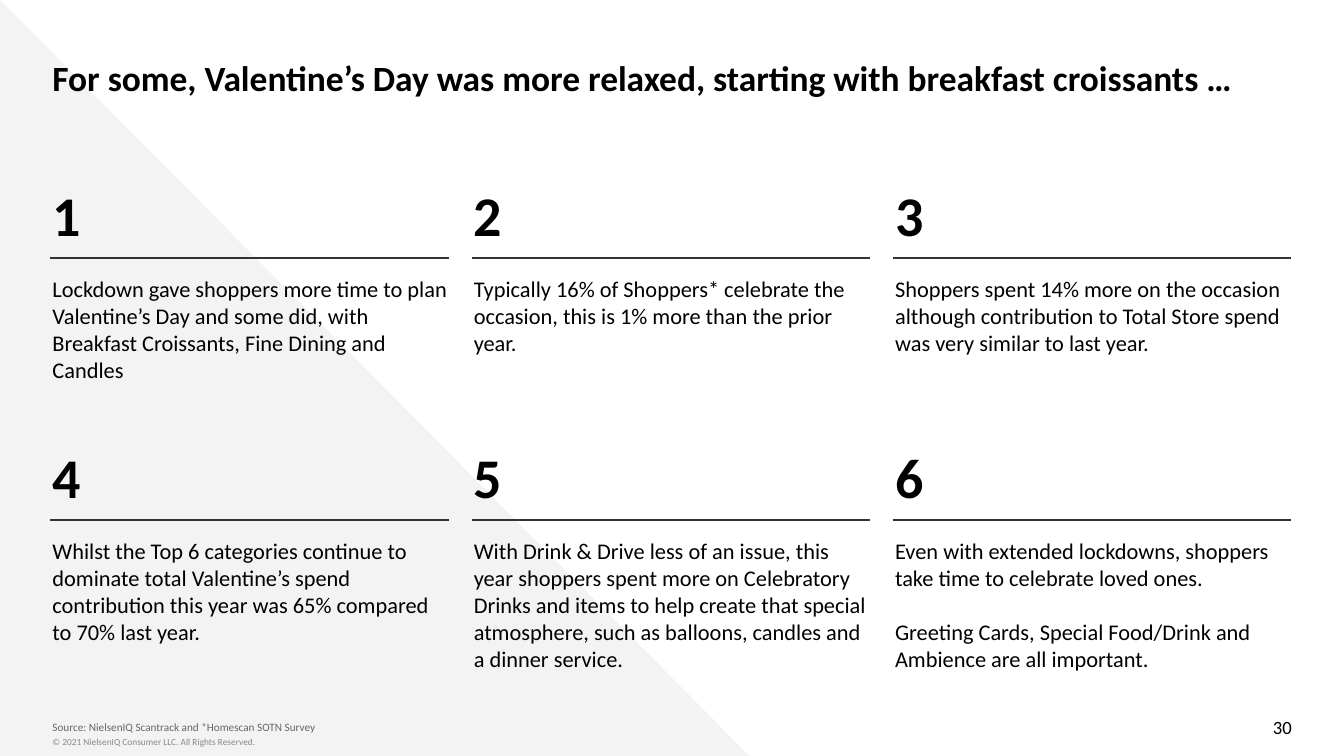
from lxml import etree
from pptx import Presentation
from pptx.dml.color import RGBColor
from pptx.enum.shapes import MSO_CONNECTOR, MSO_SHAPE
from pptx.enum.text import MSO_ANCHOR, PP_ALIGN
from pptx.oxml.ns import qn
from pptx.util import Pt

STRAIGHT = MSO_CONNECTOR.STRAIGHT
RIGHT_TRIANGLE = MSO_SHAPE.RIGHT_TRIANGLE
TOP, MIDDLE, BOTTOM = MSO_ANCHOR.TOP, MSO_ANCHOR.MIDDLE, MSO_ANCHOR.BOTTOM
LEFT, RIGHT = PP_ALIGN.LEFT, PP_ALIGN.RIGHT

BLACK = RGBColor(0x00, 0x00, 0x00)
RULE_GRAY = RGBColor(0x33, 0x33, 0x33)
SOURCE_GRAY = RGBColor(0x66, 0x66, 0x66)
COPYRIGHT_GRAY = RGBColor(0x88, 0x88, 0x88)
PALE_GRAY = RGBColor(0xF3, 0xF3, 0xF3)

MARGIN = 28.1
COLUMNS = 3
COLUMN_STEP = 225.7
ROW_STEP = 140.4
FIRST_ROW = 96.5

FINDINGS = [
    ["Lockdown gave shoppers more time to plan Valentine’s Day and some did, "
     "with Breakfast Croissants, Fine Dining and Candles"],
    ["Typically 16% of Shoppers* celebrate the occasion, this is 1% more than "
     "the prior year."],
    ["Shoppers spent 14% more on the occasion although contribution to Total "
     "Store spend was very similar to last year."],
    ["Whilst the Top 6 categories continue to dominate total Valentine’s spend "
     "contribution this year was 65% compared to 70% last year."],
    ["With Drink & Drive less of an issue, this year shoppers spent more on "
     "Celebratory Drinks and items to help create that special atmosphere, "
     "such as balloons, candles and a dinner service."],
    ["Even with extended lockdowns, shoppers take time to celebrate loved ones.",
     "Greeting Cards, Special Food/Drink and Ambience are all important."],
]


class SlideBuilder:
    font_name = "Calibri"
    paragraph_gap = 14.6

    def __init__(self, slide):
        self.slide = slide

    def triangle(self, left, top, width, height, color):
        shape = self.slide.shapes.add_shape(
            RIGHT_TRIANGLE, Pt(left), Pt(top), Pt(width), Pt(height))
        shape.shadow.inherit = False
        shape.fill.solid()
        shape.fill.fore_color.rgb = color
        shape.line.fill.background()

    def rule(self, left, top, width):
        connector = self.slide.shapes.add_connector(
            STRAIGHT, Pt(left), Pt(top), Pt(left + width), Pt(top))
        connector.line.color.rgb = RULE_GRAY
        connector.line.width = Pt(0.75)
        etree.SubElement(connector._element.spPr, qn("a:effectLst"))

    def text(self, paragraphs, left, top, width, height, *, size, color=BLACK,
             bold=False, align=LEFT, anchor=TOP, inset_top=3.6, inset_bottom=3.6):
        box = self.slide.shapes.add_textbox(
            Pt(left), Pt(top), Pt(width), Pt(height))
        frame = box.text_frame
        frame.word_wrap = True
        frame.vertical_anchor = anchor
        frame.margin_left = frame.margin_right = 0
        frame.margin_top, frame.margin_bottom = Pt(inset_top), Pt(inset_bottom)
        for index, content in enumerate(paragraphs):
            paragraph = frame.add_paragraph() if index else frame.paragraphs[0]
            if index:
                paragraph.space_before = Pt(self.paragraph_gap)
            paragraph.alignment = align
            run = paragraph.add_run()
            run.text = content
            run.font.name = self.font_name
            run.font.size = Pt(size)
            run.font.bold = bold
            run.font.color.rgb = color

    def finding(self, number, paragraphs, left, top):
        self.text([str(number)], left, top, 122.4, 41.8, size=30, bold=True,
                  inset_top=0)
        self.rule(left - 1.2, top + 41.8, 213.5)
        self.text(paragraphs, left, top + 47.5, 212.4, 92.9, size=12)


def main():
    presentation = Presentation()
    presentation.slide_width, presentation.slide_height = Pt(720), Pt(405)
    slide = presentation.slides.add_slide(presentation.slide_layouts[6])
    builder = SlideBuilder(slide)

    builder.triangle(0, 0, 402.5, 406, PALE_GRAY)
    builder.text(["© 2021 NielsenIQ Consumer LLC. All Rights Reserved."],
                 MARGIN, 391, 399, 14.4, size=5, color=COPYRIGHT_GRAY)
    builder.text(["30"], 530, 379, 162, 21.6, size=10, align=RIGHT, anchor=MIDDLE)
    builder.text(["For some, Valentine’s Day was more relaxed, starting with "
                  "breakfast croissants …"],
                 MARGIN, 23, 664, 31, size=19, bold=True,
                 inset_top=7.2, inset_bottom=7.2)
    for index, paragraphs in enumerate(FINDINGS):
        row, column = divmod(index, COLUMNS)
        builder.finding(index + 1, paragraphs, MARGIN + column * COLUMN_STEP,
                        FIRST_ROW + row * ROW_STEP)
    builder.text(["Source: NielsenIQ Scantrack and *Homescan SOTN Survey"],
                 MARGIN, 382.5, 642, 14.4, size=6, color=SOURCE_GRAY,
                 anchor=BOTTOM, inset_top=7.2, inset_bottom=7.2)

    presentation.save("out.pptx")


if __name__ == "__main__":
    main()
